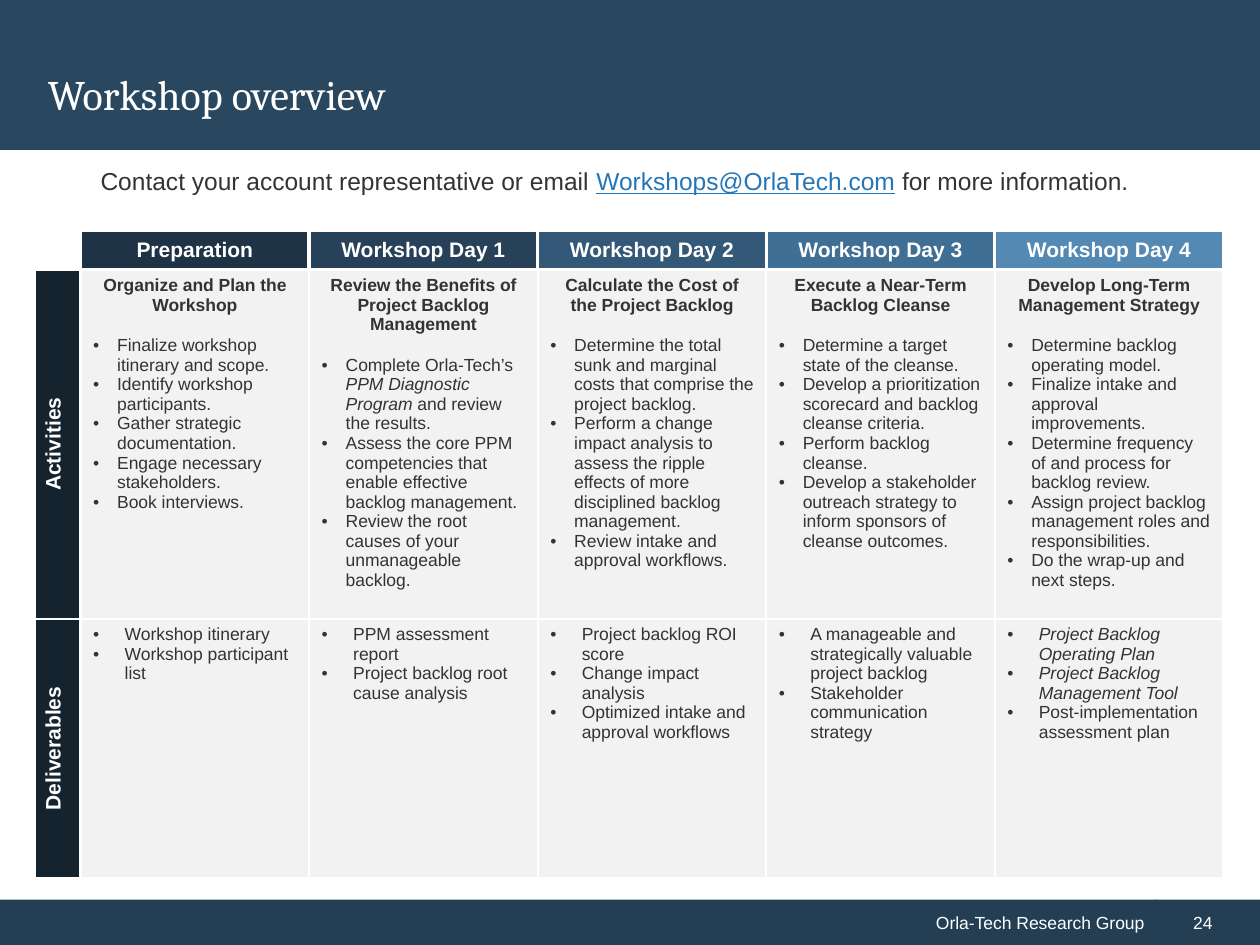
from dataclasses import dataclass

from lxml.etree import SubElement
from pptx import Presentation
from pptx.dml.color import RGBColor
from pptx.enum.shapes import MSO_SHAPE as Shape
from pptx.enum.text import MSO_ANCHOR as Anchor, PP_ALIGN as Align
from pptx.oxml import parse_xml
from pptx.oxml.ns import nsdecls, qn
from pptx.util import Inches, Pt


@dataclass(frozen=True)
class Theme:
    heading_font: str = "Cambria"
    body_font: str = "Arial"
    title_size: int = 24
    contact_size: int = 14
    label_size: int = 12
    body_size: int = 10
    white: str = "FFFFFF"
    text: str = "333333"
    link: str = "2576B7"
    banner: str = "29475F"
    footer: str = "243F54"
    row_label: str = "15232F"
    panel: str = "F2F2F2"
    days: tuple = ("1E3346", "264158", "345978", "406F96", "5489B4")


THEME = Theme()

# Each column: header, activity heading, activities, deliverables.
# Text between asterisks is italic.
COLUMNS = [
    ("Preparation", "Organize and Plan the Workshop",
     ["Finalize workshop itinerary and scope.",
      "Identify workshop participants.",
      "Gather strategic documentation.",
      "Engage necessary stakeholders.",
      "Book interviews."],
     ["Workshop itinerary", "Workshop participant list"]),
    ("Workshop Day 1", "Review the Benefits of Project Backlog Management",
     ["Complete Orla-Tech’s *PPM Diagnostic Program* and review the results.",
      "Assess the core PPM competencies that enable effective backlog management.",
      "Review the root causes of your unmanageable backlog."],
     ["PPM assessment report", "Project backlog root cause analysis"]),
    ("Workshop Day 2", "Calculate the Cost of the Project Backlog",
     ["Determine the total sunk and marginal costs that comprise the project backlog.",
      "Perform a change impact analysis to assess the ripple effects of more "
      "disciplined backlog management.",
      "Review intake and approval workflows."],
     ["Project backlog ROI score", "Change impact analysis",
      "Optimized intake and approval workflows"]),
    ("Workshop Day 3", "Execute a Near-Term Backlog Cleanse",
     ["Determine a target state of the cleanse.",
      "Develop a prioritization scorecard and backlog cleanse criteria.",
      "Perform backlog cleanse.",
      "Develop a stakeholder outreach strategy to inform sponsors of cleanse outcomes."],
     ["A manageable and strategically valuable project backlog",
      "Stakeholder communication strategy"]),
    ("Workshop Day 4", "Develop Long-Term Management Strategy",
     ["Determine backlog operating model.",
      "Finalize intake and approval improvements.",
      "Determine frequency of and process for backlog review.",
      "Assign project backlog management roles and responsibilities.",
      "Do the wrap-up and next steps."],
     ["*Project Backlog Operating Plan*", "*Project Backlog Management Tool*",
      "Post-implementation assessment plan"]),
]


def rgb(color):
    return RGBColor.from_string(color)


def style(p, size, color, align=Align.LEFT, bold=False, font=THEME.body_font):
    """Format a paragraph and its end mark, whose size also affects row heights."""
    p.alignment = align
    p.font.name, p.font.size, p.font.bold = font, Pt(size), bold
    p.font.color.rgb = rgb(color)
    SubElement(p._p, qn("a:endParaRPr"), sz=str(size * 100))


def add_band(s, box, color, text="", align=Align.LEFT, indent=0.1):
    band = s.shapes.add_shape(Shape.RECTANGLE, *map(Inches, box))
    band.shadow.inherit = False
    band.fill.solid()
    band.fill.fore_color.rgb = rgb(color)
    band.line.fill.background()
    if text:
        tf = band.text_frame
        tf.vertical_anchor, tf.margin_left = Anchor.MIDDLE, Inches(indent)
        p = tf.paragraphs[0]
        p.text = text
        style(p, THEME.body_size, THEME.white, align)
    return band


def set_title(s, text):
    title = s.shapes.title
    title.left, title.top, title.width, title.height = map(
        Inches, (0.28, 0.28, 9.43, 0.96))
    title.text_frame.vertical_anchor = Anchor.MIDDLE
    p = title.text_frame.paragraphs[0]
    p.text, p.line_spacing = text, Pt(26)
    style(p, THEME.title_size, THEME.white, font=THEME.heading_font)


def add_contact_line(s, before, address, after):
    tf = s.shapes.add_textbox(*map(Inches, (0.7, 1.27, 8.97, 0.38))).text_frame
    tf.word_wrap = True
    p = tf.paragraphs[0]
    style(p, THEME.contact_size, THEME.text)
    for text in (before, address, after):
        r = p.add_run()
        r.text = text
        if text == address:
            r.font.underline = True
            r.font.color.rgb = rgb(THEME.link)


def set_borders(cell, side_width):
    """Draw white cell edges; the line elements must precede the fill."""
    tc_pr = cell._tc.get_or_add_tcPr()
    widths = {"lnL": side_width, "lnR": side_width, "lnT": 1.5, "lnB": 1.5}
    for i, (tag, width) in enumerate(widths.items()):
        tc_pr.insert(i, parse_xml(
            f'<a:{tag} {nsdecls("a")} w="{Pt(width)}"><a:solidFill>'
            f'<a:srgbClr val="{THEME.white}"/></a:solidFill></a:{tag}>'))


def fill_cell(cell, color, side_width=1.5):
    cell.fill.solid()
    cell.fill.fore_color.rgb = rgb(color)
    set_borders(cell, side_width)


def label_cell(cell, text, color, side_width=1.5, upright=False):
    fill_cell(cell, color, side_width)
    cell.vertical_anchor = Anchor.MIDDLE
    p = cell.text_frame.paragraphs[0]
    p.text = text
    style(p, THEME.label_size, THEME.white, Align.CENTER, bold=True)
    if upright:
        p.space_after = Pt(5)
        cell._tc.get_or_add_tcPr().set("vert", "vert270")


def write_bullet(p, text, indent):
    style(p, THEME.body_size, THEME.text)
    p_pr = p._p.get_or_add_pPr()
    p_pr.set("marL", str(Inches(indent)))
    p_pr.set("indent", str(-Inches(indent)))
    font = SubElement(p_pr, qn("a:buFont"), typeface=THEME.body_font)
    bullet = SubElement(p_pr, qn("a:buChar"), char="•")
    for element in (font, bullet):
        p_pr.find(qn("a:defRPr")).addprevious(element)
    for i, part in enumerate(text.split("*")):
        if part:
            r = p.add_run()
            r.text, r.font.italic = part, i % 2 == 1


def list_cell(cell, items, indent, heading=None):
    fill_cell(cell, THEME.panel)
    tf = cell.text_frame
    p = tf.paragraphs[0]
    if heading:
        p.text, p.space_after = heading, Pt(12)
        style(p, THEME.body_size, THEME.text, Align.CENTER, bold=True)
    for i, item in enumerate(items):
        write_bullet(tf.add_paragraph() if heading or i else p, item, indent)


def add_schedule(s):
    width, label_width = 9.43, 0.36
    frame = s.shapes.add_table(3, len(COLUMNS) + 1, *map(Inches, (0.28, 1.83, width, 5.02)))
    table = frame.table
    for row, height in zip(table.rows, (0.31, 2.65, 2.06)):
        row.height = Inches(height)
    for i, column in enumerate(table.columns):
        column.width = Inches((width - label_width) / len(COLUMNS) if i else label_width)

    corner = table.cell(0, 0)
    corner.fill.background()
    set_borders(corner, 2.25)
    style(corner.text_frame.paragraphs[0], THEME.label_size, THEME.white)
    for row, text in enumerate(("Activities", "Deliverables"), 1):
        label_cell(table.cell(row, 0), text, THEME.row_label, upright=True)
    for col, (day, heading, activities, deliverables) in enumerate(COLUMNS, 1):
        label_cell(table.cell(0, col), day, THEME.days[col - 1], side_width=2.25)
        list_cell(table.cell(1, col), activities, 0.19, heading)
        list_cell(table.cell(2, col), deliverables, 0.25)


def main():
    prs = Presentation()
    prs.slide_width, prs.slide_height = Inches(10), Inches(7.5)
    s = prs.slides.add_slide(prs.slide_layouts[5])
    banner = add_band(s, (0, -0.03, 10, 1.22), THEME.banner)
    s.shapes.title._element.addprevious(banner._element)
    set_title(s, "Workshop overview")
    add_band(s, (0, 7.14, 9.18, 0.37), THEME.footer, "Orla-Tech Research Group", Align.RIGHT)
    add_band(s, (9.17, 7.14, 0.83, 0.37), THEME.footer, "24", indent=0.3)
    add_contact_line(s, "Contact your account representative or email ",
                     "Workshops@OrlaTech.com", " for more information.")
    add_schedule(s)
    prs.save("out.pptx")


if __name__ == "__main__":
    main()
